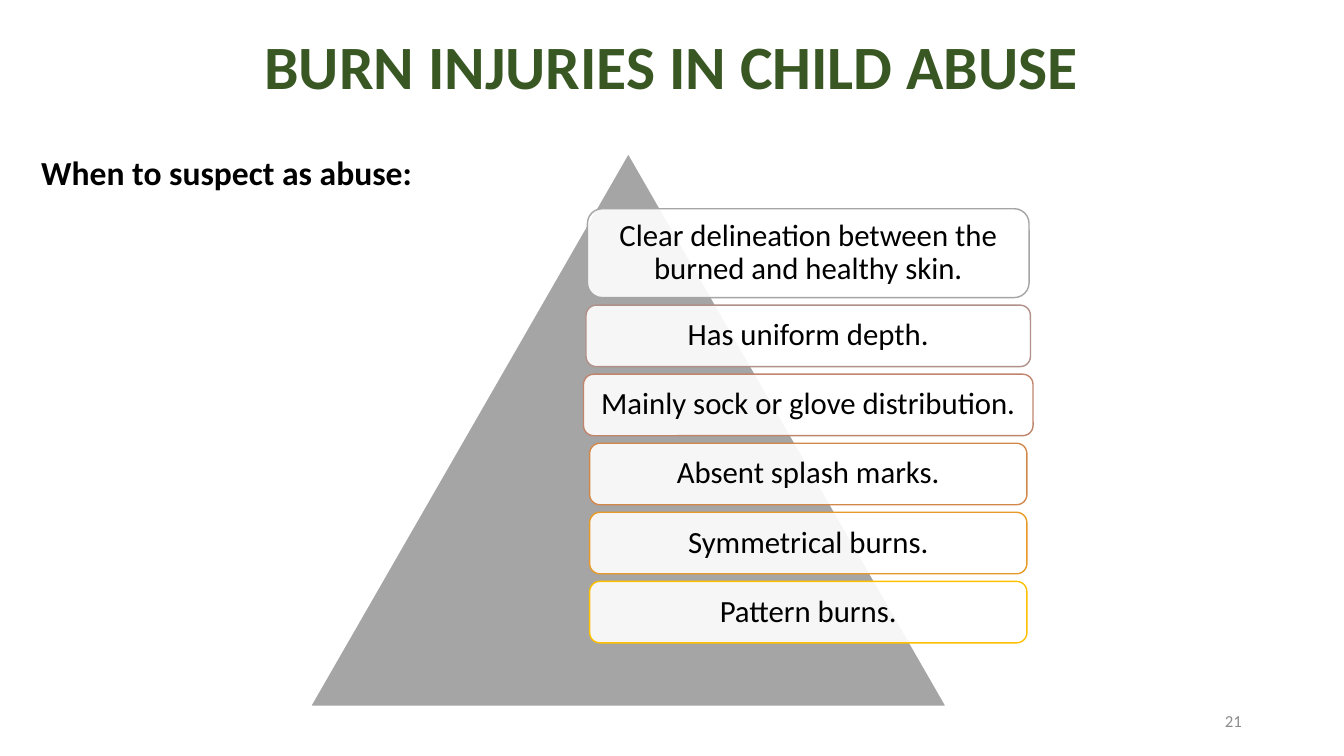
from dataclasses import dataclass
from lxml.etree import SubElement
from pptx import Presentation
from pptx.dml.color import RGBColor
from pptx.enum.shapes import MSO_SHAPE as Preset
from pptx.enum.text import MSO_ANCHOR as Anchor, PP_ALIGN as Align
from pptx.oxml.ns import qn
from pptx.util import Cm, Pt


@dataclass(frozen=True)
class Theme:
    font: str = "Calibri"
    title: str = "385723"
    ink: str = "000000"
    paper: str = "FFFFFF"
    grey: str = "A5A5A5"
    faint: str = "8C8C8C"
    outlines: tuple = ("A5A5A5", "B1908A", "C0856C", "D2884B", "E79A27", "FFC000")
    title_size: int = 44
    lead_size: int = 24
    card_size: int = 22
    number_size: int = 12


theme = Theme()


def write(frame, words, size, color, align, bold=False):
    frame.vertical_anchor = Anchor.MIDDLE
    paragraph = frame.paragraphs[0]
    paragraph.alignment = align
    for word in words:
        run = paragraph.add_run()
        run.text = word
        run.font.name = theme.font
        run.font.size = Pt(size)
        run.font.bold = bold
        run.font.color.rgb = RGBColor.from_string(color)
    return paragraph


def add_outlined(preset, left, top, width, height, fill, line):
    shape = slide.shapes.add_shape(preset, Cm(left), Cm(top), Cm(width), Cm(height))
    shape.shadow.inherit = False
    shape.fill.solid()
    shape.fill.fore_color.rgb = RGBColor.from_string(fill)
    shape.line.color.rgb = RGBColor.from_string(line)
    shape.line.width = Pt(1)
    return shape


deck = Presentation()
deck.slide_width, deck.slide_height = Cm(33.87), Cm(19.05)
slide = deck.slides.add_slide(deck.slide_layouts[5])

title = slide.shapes.title
title.left, title.top, title.width, title.height = Cm(3.66), Cm(0.66), Cm(26.54), Cm(1.9)
heading = title.text_frame
heading.margin_left = heading.margin_right = heading.margin_bottom = 0
heading.margin_top = Cm(0.03)
write(heading, ["BURN ", "INJURIES ", "IN ", "CHILD ", "ABUSE"],
      theme.title_size, theme.title, Align.CENTER, bold=True)

number = slide.shapes.add_textbox(Cm(23.93), Cm(17.65), Cm(7.62), Cm(1.02)).text_frame
number.word_wrap = True
write(number, ["21"], theme.number_size, theme.faint, Align.RIGHT)

add_outlined(Preset.ISOSCELES_TRIANGLE, 7.82, 3.86, 16.03, 13.94, theme.grey, theme.paper)

signs = [
    ("Clear delineation between the burned and healthy skin.", 11.13, 2.24),
    ("Has uniform depth.", 11.2, 1.55),
    ("Mainly sock or glove distribution.", 11.33, 1.55),
    ("Absent splash marks.", 11.02, 1.55),
    ("Symmetrical burns.", 11.02, 1.55),
    ("Pattern burns.", 11.02, 1.55),
]
center, top, gap = 20.37, 5.26, 0.19
for (sign, width, height), outline in zip(signs, theme.outlines):
    card = add_outlined(Preset.ROUNDED_RECTANGLE, center - width / 2, top, width, height,
                        theme.paper, outline)
    tint = card.fill._xPr.find(qn("a:solidFill"))[0]
    SubElement(tint, qn("a:alpha"), val="90000")
    label = card.text_frame
    label.word_wrap = True
    label.margin_left = label.margin_right = Cm(0.23)
    label.margin_top = label.margin_bottom = Cm(0.23)
    write(label, [sign], theme.card_size, theme.ink, Align.CENTER).line_spacing = 0.9
    top += height + gap

lead = slide.shapes.add_textbox(Cm(0.79), Cm(3.71), Cm(10.06), Cm(1.27)).text_frame
lead.word_wrap = True
write(lead, ["When ", "to ", "suspect ", "as ", "abuse:"],
      theme.lead_size, theme.ink, Align.LEFT, bold=True)

deck.save("out.pptx")
